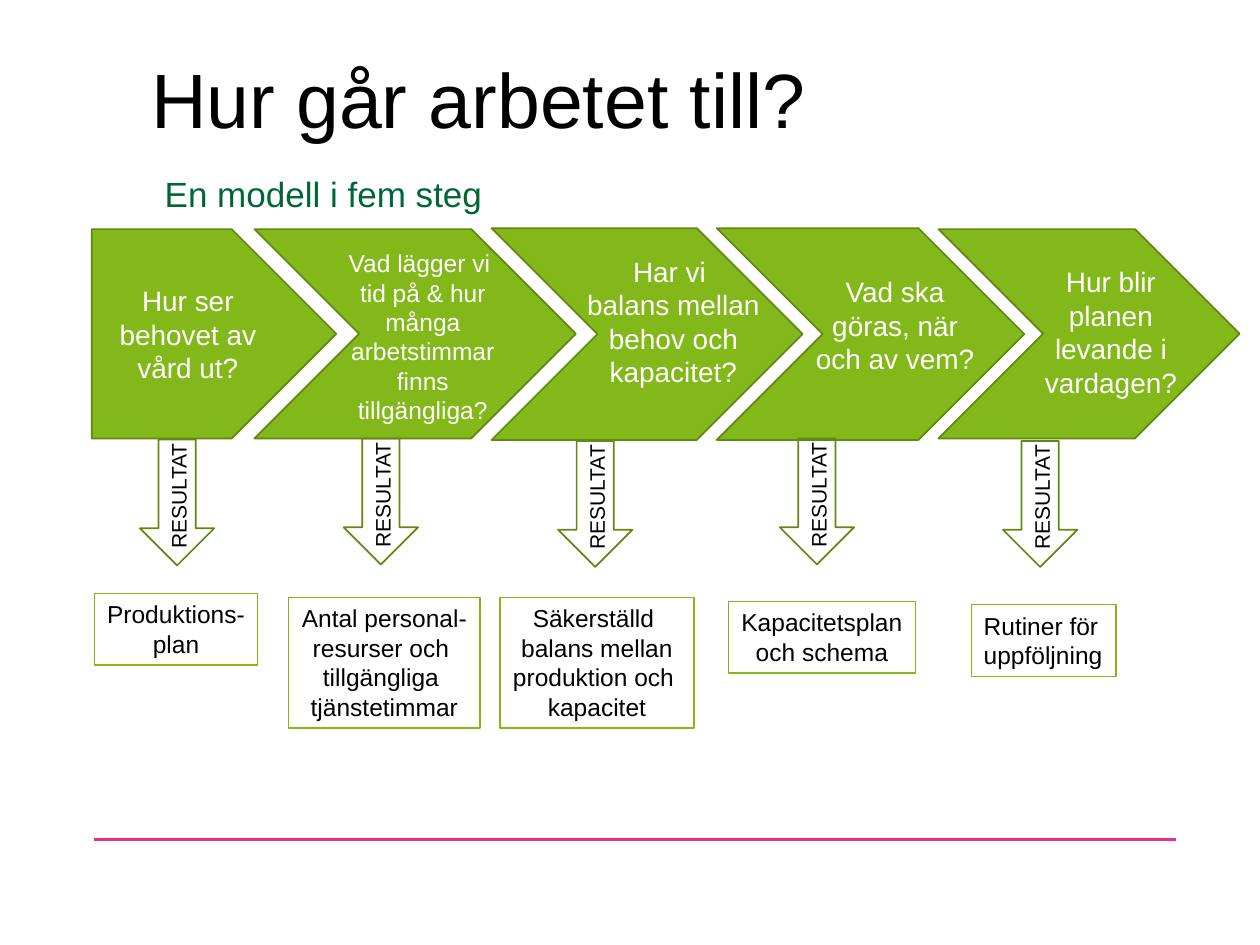
from dataclasses import dataclass
from typing import Optional

import pptx
import pptx.dml.color
import pptx.enum.shapes
import pptx.enum.text
import pptx.oxml
import pptx.util

Cm = pptx.util.Cm
Pt = pptx.util.Pt
Color = pptx.dml.color.RGBColor
ShapeType = pptx.enum.shapes.MSO_SHAPE
Align = pptx.enum.text.PP_ALIGN
Anchor = pptx.enum.text.MSO_ANCHOR
AutoSize = pptx.enum.text.MSO_AUTO_SIZE


@dataclass(frozen=True)
class Theme:
    font: str = "Arial"
    black: Color = Color.from_string("000000")
    white: Color = Color.from_string("FFFFFF")
    green: Color = Color.from_string("83B81A")
    outline: Color = Color.from_string("618813")
    heading: Color = Color.from_string("006633")
    rule: Color = Color.from_string("E13288")
    title_size: int = 44
    subtitle_size: int = 20
    step_size: int = 16
    small_size: int = 14
    result_size: int = 12


THEME = Theme()


@dataclass(frozen=True)
class Box:
    """A rectangle in centimetres."""
    left: float
    top: float
    width: float
    height: float

    def lengths(self) -> tuple:
        return tuple(Cm(v) for v in (self.left, self.top, self.width, self.height))


@dataclass(frozen=True)
class Step:
    """One stage: its block, question, arrow corner and outcome."""
    block: Box
    question: str
    question_box: Optional[Box]
    question_size: int
    arrow_left: float
    arrow_top: float
    outcome: tuple
    outcome_box: Box
    outcome_align: Align = Align.CENTER


STEPS = (
    Step(Box(1.85, 4.62, 4.93, 4.22), "Hur ser behovet av vård ut?", None,
         THEME.step_size, 2.82, 8.86,
         ("Produktions-\nplan",), Box(1.9, 11.96, 3.3, 1.45)),
    Step(Box(5.13, 4.62, 6.48, 4.22),
         "Vad lägger vi \ntid på & hur många arbetstimmar finns tillgängliga?",
         Box(6.48, 4.88, 4.09, 4.62), THEME.small_size, 6.93, 8.84,
         ("Antal personal-\nresurser och \ntillgängliga \ntjänstetimmar",),
         Box(5.82, 12.04, 3.86, 2.64)),
    Step(Box(9.91, 4.6, 6.27, 4.27),
         "Har vi \nbalans mellan behov och kapacitet?",
         Box(11.53, 5.0, 4.09, 3.76), THEME.step_size, 11.25, 8.89,
         ("Säkerställd \nbalans mellan", "produktion och \nkapacitet"),
         Box(10.08, 12.04, 3.91, 2.64)),
    Step(Box(14.45, 4.6, 6.2, 4.27), "Vad ska göras, när och av vem?",
         Box(16.0, 5.41, 4.09, 3.07), THEME.step_size, 15.72, 8.84,
         ("Kapacitetsplan", "och schema"), Box(14.68, 12.12, 3.78, 1.45)),
    Step(Box(18.92, 4.62, 6.07, 4.22), "Hur blir planen levande i vardagen?",
         Box(20.35, 5.21, 4.09, 3.07), THEME.step_size, 20.22, 8.89,
         ("Rutiner för", "uppföljning"), Box(19.58, 12.19, 2.92, 1.45), Align.LEFT),
)


def write_text(frame, paragraphs: tuple, size: int, color: Color, align: Align) -> None:
    """Fill a frame; a newline inside a paragraph becomes a line break."""
    for index, text in enumerate(paragraphs):
        paragraph = frame.paragraphs[0] if index == 0 else frame.add_paragraph()
        paragraph.alignment = align
        for number, line in enumerate(text.split("\n")):
            if number:
                paragraph.add_line_break()
            run = paragraph.add_run()
            run.text = line
            run.font.name = THEME.font
            run.font.size = Pt(size)
            run.font.color.rgb = color


def add_text_box(slide, box: Box, text: str, size: int, color: Color,
                 align: Align = Align.LEFT, rotation: float = 0):
    shape = slide.shapes.add_textbox(*box.lengths())
    shape.rotation = rotation
    shape.text_frame.word_wrap = True
    shape.text_frame.auto_size = AutoSize.SHAPE_TO_FIT_TEXT
    write_text(shape.text_frame, (text,), size, color, align)


def add_outlined_shape(slide, kind: ShapeType, box: Box, fill: Optional[Color],
                       line: Color, line_width: float):
    shape = slide.shapes.add_shape(kind, *box.lengths())
    shape.shadow.inherit = False
    if fill is None:
        shape.fill.background()
    else:
        shape.fill.solid()
        shape.fill.fore_color.rgb = fill
    shape.line.color.rgb = line
    shape.line.width = Pt(line_width)
    return shape


def add_block(slide, step: Step) -> None:
    """Draw the green block; a step without a question box holds its own text."""
    kind = ShapeType.CHEVRON if step.question_box else ShapeType.PENTAGON
    shape = add_outlined_shape(slide, kind, step.block, THEME.green, THEME.outline, 1)
    if not step.question_box:
        frame = shape.text_frame
        frame.word_wrap = True
        frame.vertical_anchor = Anchor.MIDDLE
        write_text(frame, (step.question,), step.question_size, THEME.white, Align.CENTER)


def add_result_arrow(slide, left: float, top: float) -> None:
    add_text_box(slide, Box(left - 0.71, top + 0.58, 2.97, 0.76), "RESULTAT",
                 THEME.result_size, THEME.black, rotation=270)
    add_outlined_shape(slide, ShapeType.DOWN_ARROW, Box(left, top, 1.5, 2.54),
                       None, THEME.outline, 1)


def add_outcome(slide, step: Step) -> None:
    shape = add_outlined_shape(slide, ShapeType.RECTANGLE, step.outcome_box,
                               None, THEME.green, 0.75)
    frame = shape.text_frame
    frame.word_wrap = False
    frame.auto_size = AutoSize.SHAPE_TO_FIT_TEXT
    frame.vertical_anchor = Anchor.TOP
    write_text(frame, step.outcome, THEME.small_size, THEME.black, step.outcome_align)


def add_rule(slide) -> None:
    rule = slide.shapes.add_connector(pptx.enum.shapes.MSO_CONNECTOR.STRAIGHT,
                                      Cm(1.9), Cm(16.92), Cm(23.7), Cm(16.92))
    rule.line.color.rgb = THEME.rule
    rule.line.width = Pt(1.5)
    properties = rule._element.spPr
    properties.append(pptx.oxml.parse_xml(
        '<a:effectLst xmlns:a="http://schemas.openxmlformats.org/drawingml/2006/main"/>'))


def set_title(slide, text: str) -> None:
    title = slide.shapes.title
    title.left, title.top, title.width, title.height = Box(2.79, 1.02, 21.89, 3.68).lengths()
    frame = title.text_frame
    frame.vertical_anchor = Anchor.TOP
    frame.margin_top = Cm(0.23)
    write_text(frame, (text,), THEME.title_size, THEME.black, Align.LEFT)
    frame.paragraphs[0].line_spacing = 0.9


def main() -> None:
    presentation = pptx.Presentation()
    presentation.slide_width = Cm(25.4)
    presentation.slide_height = Cm(19.05)
    slide = presentation.slides.add_slide(presentation.slide_layouts[5])
    add_rule(slide)
    set_title(slide, "Hur går arbetet till?")
    for step in STEPS:
        add_block(slide, step)
    for step in STEPS:
        if step.question_box:
            add_text_box(slide, step.question_box, step.question, step.question_size,
                         THEME.white, Align.CENTER)
        add_result_arrow(slide, step.arrow_left, step.arrow_top)
        add_outcome(slide, step)
    add_text_box(slide, Box(3.07, 3.35, 13.69, 1.12), "En modell i fem steg",
                 THEME.subtitle_size, THEME.heading)
    presentation.save("out.pptx")


if __name__ == "__main__":
    main()
